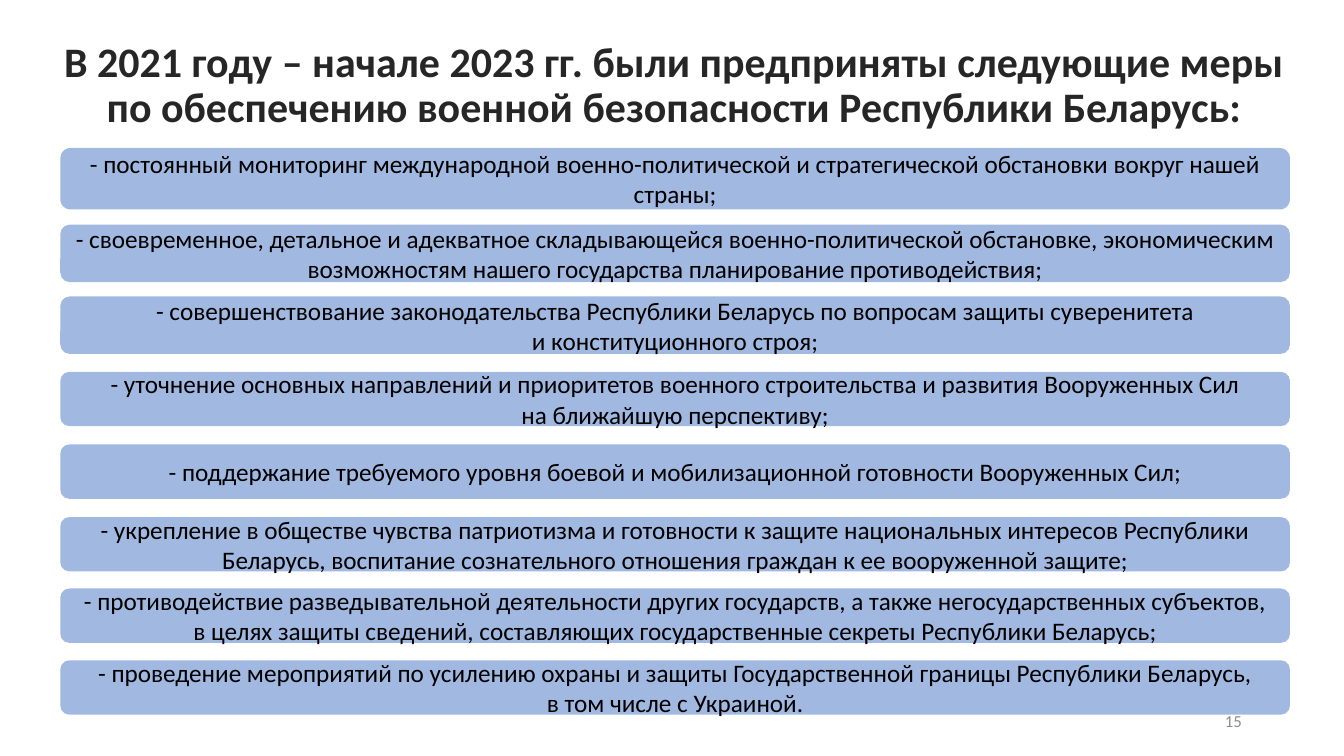
import pptx
import pptx.util
import pptx.dml.color
import pptx.enum.shapes
import pptx.enum.text
import pptx.oxml
import pptx.oxml.ns

Cm = pptx.util.Cm
ALIGN = pptx.enum.text.PP_ALIGN
HUES = {"title": "262626", "text": "000000", "bar": "4472C4", "page": "8C8C8C"}


class Deck:
    """Hold the style and the current slide, and draw its elements."""

    def __init__(self):
        self.font = "Calibri"
        self.prs = pptx.Presentation()
        self.prs.slide_width = Cm(33.87)
        self.prs.slide_height = Cm(19.05)
        self.slide = self.prs.slides.add_slide(self.prs.slide_layouts[5])

    def hue(self, name):
        return pptx.dml.color.RGBColor.from_string(HUES[name])

    def label(self, shape, text, size, hue, align=ALIGN.CENTER, bold=False, lead=None):
        frame = shape.text_frame
        frame.word_wrap = True
        frame.auto_size = pptx.enum.text.MSO_AUTO_SIZE.NONE
        frame.vertical_anchor = pptx.enum.text.MSO_ANCHOR.MIDDLE
        para = frame.paragraphs[0]
        para.alignment = align
        para.line_spacing = lead
        for num, line in enumerate(text.split("\n")):
            if num:
                para.add_line_break()
            run = para.add_run()
            run.text = line
            run.font.name = self.font
            run.font.size = pptx.util.Pt(size)
            run.font.bold = bold
            run.font.color.rgb = self.hue(hue)

    def title(self, text, left, top, width, height):
        shape = self.slide.shapes.title
        shape.left, shape.top = Cm(left), Cm(top)
        shape.width, shape.height = Cm(width), Cm(height)
        self.label(shape, text, 30, "title", bold=True, lead=0.9)

    def bar(self, text, left, top, width, height):
        shape = self.slide.shapes.add_shape(
            pptx.enum.shapes.MSO_SHAPE.ROUNDED_RECTANGLE,
            Cm(left), Cm(top), Cm(width), Cm(height))
        shape.shadow.inherit = False
        shape.line.fill.background()
        shape.fill.solid()
        shape.fill.fore_color.rgb = self.hue("bar")
        tint = shape.element.spPr.find(".//" + pptx.oxml.ns.qn("a:srgbClr"))
        tint.append(pptx.oxml.parse_xml(
            f'<a:alpha {pptx.oxml.ns.nsdecls("a")} val="50000"/>'))
        self.label(shape, text, 18, "text")

    def page(self, text, left, top, width, height):
        box = self.slide.shapes.add_textbox(Cm(left), Cm(top), Cm(width), Cm(height))
        self.label(box, text, 12, "page", ALIGN.RIGHT)


STEPS = [
    (3.73, 1.55, "- постоянный мониторинг международной военно-политической и "
     "стратегической обстановки вокруг нашей страны;"),
    (5.66, 1.45, "- своевременное, детальное и адекватное складывающейся "
     "военно-политической обстановке, экономическим возможностям нашего "
     "государства планирование противодействия;"),
    (7.47, 1.45, "- совершенствование законодательства Республики Беларусь по "
     "вопросам защиты суверенитета\nи конституционного строя;"),
    (9.37, 1.37, "- уточнение основных направлений и приоритетов военного "
     "строительства и развития Вооруженных Сил\nна ближайшую перспективу;"),
    (11.2, 1.37, "- поддержание требуемого уровня боевой и мобилизационной "
     "готовности Вооруженных Сил;"),
    (13.03, 1.37, "- укрепление в обществе чувства патриотизма и готовности к "
     "защите национальных интересов Республики Беларусь, воспитание "
     "сознательного отношения граждан к ее вооруженной защите;"),
    (14.83, 1.37, "- противодействие разведывательной деятельности других "
     "государств, а также негосударственных субъектов,\nв целях защиты "
     "сведений, составляющих государственные секреты Республики Беларусь;"),
    (16.64, 1.37, "- проведение мероприятий по усилению охраны и защиты "
     "Государственной границы Республики Беларусь,\nв том числе с Украиной."),
]


def main():
    deck = Deck()
    deck.page("15", 23.93, 17.65, 7.62, 1.02)
    deck.title("В 2021 году – начале 2023 гг. были предприняты следующие меры "
               "по обеспечению военной безопасности Республики Беларусь:",
               1.17, 1.32, 31.65, 1.7)
    for top, height, text in STEPS:
        deck.bar(text, 1.52, top, 30.99, height)
    deck.prs.save("out.pptx")


if __name__ == "__main__":
    main()
